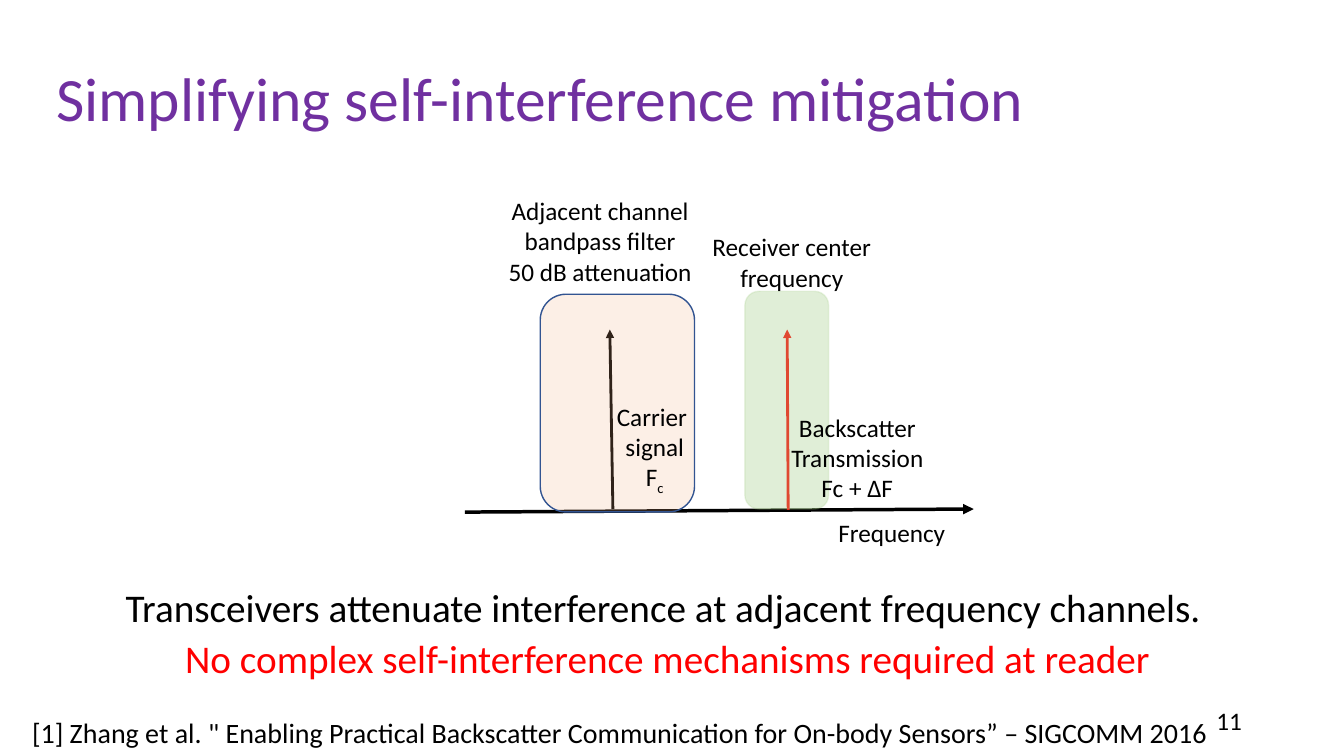
from lxml.etree import SubElement
from pptx import Presentation
from pptx.dml.color import RGBColor
from pptx.enum.shapes import MSO_CONNECTOR, MSO_SHAPE
from pptx.enum.text import MSO_ANCHOR, PP_ALIGN
from pptx.oxml.ns import qn
from pptx.util import Pt

BLACK = RGBColor(0, 0, 0)
PURPLE = RGBColor(0x70, 0x30, 0xA0)
RED = RGBColor(0xFF, 0, 0)
GREEN = RGBColor(0xA9, 0xD1, 0x8E)
ORANGE = RGBColor(0xF4, 0xB1, 0x83)
BLUE = RGBColor(0x32, 0x54, 0x91)

TITLE = "Simplifying self-interference mitigation"
CONCLUSIONS = [
    ("Transceivers attenuate interference at adjacent frequency channels. ", BLACK),
    ("No complex self-interference mechanisms required at reader", RED),
]
REFERENCE = ("[1] Zhang et al. \" Enabling Practical Backscatter Communication "
             "for On-body Sensors” – SIGCOMM 2016")
PAGE_NUMBER = "11"

ARROWS = [
    ((332, 365.8), (695.5, 363.6), BLACK, 2.5),
    ((563, 364.3), (562.3, 235.4), RED, 2),
    ((437.8, 363.6), (435.6, 235.4), BLACK, 2),
]
BANDS = [
    ((532.1, 208.1, 59.8, 155.5), GREEN, 35, GREEN, 24),
    ((385.9, 210.2, 110.2, 155.5), ORANGE, 20, BLUE, 100),
]
DIAGRAM_LABELS = [
    ((591.8, 365.8, 206.6, 28.8), ["Frequency"], PP_ALIGN.LEFT),
    ((493.2, 162, 144.7, 51.1), ["Receiver center frequency"], PP_ALIGN.CENTER),
    ((347, 136.1, 163.4, 72.7),
     ["Adjacent channel", "bandpass filter", "50 dB attenuation"], PP_ALIGN.CENTER),
    ((540, 290.9, 144.7, 72.7),
     ["Backscatter", "Transmission", "Fc + ΔF"], PP_ALIGN.CENTER),
    ((412.6, 283, 110.2, 72.7), ["Carrier ", "signal", ("F", "c")], PP_ALIGN.CENTER),
]


def add_text(slide, box, lines, size=18, color=BLACK, align=PP_ALIGN.LEFT,
             anchor=MSO_ANCHOR.TOP, line_spacing=1.0, space_after=0):
    frame = slide.shapes.add_textbox(*map(Pt, box)).text_frame
    frame.word_wrap = True
    frame.vertical_anchor = anchor
    for index, line in enumerate(lines):
        paragraph = frame.paragraphs[0] if index == 0 else frame.add_paragraph()
        paragraph.alignment = align
        paragraph.line_spacing = line_spacing
        paragraph.space_after = Pt(space_after)
        parts = (line,) if isinstance(line, str) else line
        for position, part in enumerate(parts):
            run = paragraph.add_run()
            run.text = part
            run.font.name = "Calibri"
            run.font.size = Pt(size)
            run.font.color.rgb = color
            if position == 1:
                run.font._element.set("baseline", "-25000")
    return frame


def add_arrow(slide, start, end, color, width):
    connector = slide.shapes.add_connector(
        MSO_CONNECTOR.STRAIGHT, *map(Pt, start + end))
    connector.line.color.rgb = color
    connector.line.width = Pt(width)
    SubElement(connector.line._get_or_add_ln(), qn("a:tailEnd"), type="triangle")
    SubElement(connector._element.spPr, qn("a:effectLst"))


def set_opacity(color_format, percent):
    color = color_format._xFill.find(qn("a:srgbClr"))
    SubElement(color, qn("a:alpha"), val=str(percent * 1000))


def add_band(slide, box, fill, fill_opacity, outline, outline_opacity):
    shape = slide.shapes.add_shape(MSO_SHAPE.ROUNDED_RECTANGLE, *map(Pt, box))
    shape.shadow.inherit = False
    shape.fill.solid()
    shape.fill.fore_color.rgb = fill
    shape.line.color.rgb = outline
    shape.line.width = Pt(1)
    properties = shape._element.spPr
    for holder, opacity in ((properties, fill_opacity),
                            (properties.find(qn("a:ln")), outline_opacity)):
        color = holder.find(qn("a:solidFill")).find(qn("a:srgbClr"))
        SubElement(color, qn("a:alpha"), val=str(opacity * 1000))


def main():
    presentation = Presentation()
    presentation.slide_width = Pt(960)
    presentation.slide_height = Pt(540)
    slide = presentation.slides.add_slide(presentation.slide_layouts[6])

    add_text(slide, (33.1, 20.2, 894.2, 104.4), [TITLE], size=44, color=PURPLE,
             anchor=MSO_ANCHOR.MIDDLE, line_spacing=0.9)
    conclusions = add_text(slide, (59.8, 419.4, 833.8, 80),
                           [text for text, color in CONCLUSIONS], size=28,
                           align=PP_ALIGN.CENTER, line_spacing=0.8, space_after=10)
    for paragraph, (text, color) in zip(conclusions.paragraphs, CONCLUSIONS):
        paragraph.runs[0].font.color.rgb = color
    add_text(slide, (678.2, 500.4, 216, 28.8), [PAGE_NUMBER],
             align=PP_ALIGN.RIGHT, anchor=MSO_ANCHOR.MIDDLE)
    add_text(slide, (15.8, 507.6, 940, 31.7), [REFERENCE], size=20)

    for arrow in ARROWS:
        add_arrow(slide, *arrow)
    for band in BANDS:
        add_band(slide, *band)
    for box, lines, align in DIAGRAM_LABELS:
        add_text(slide, box, lines, align=align)

    presentation.save("out.pptx")


if __name__ == "__main__":
    main()
